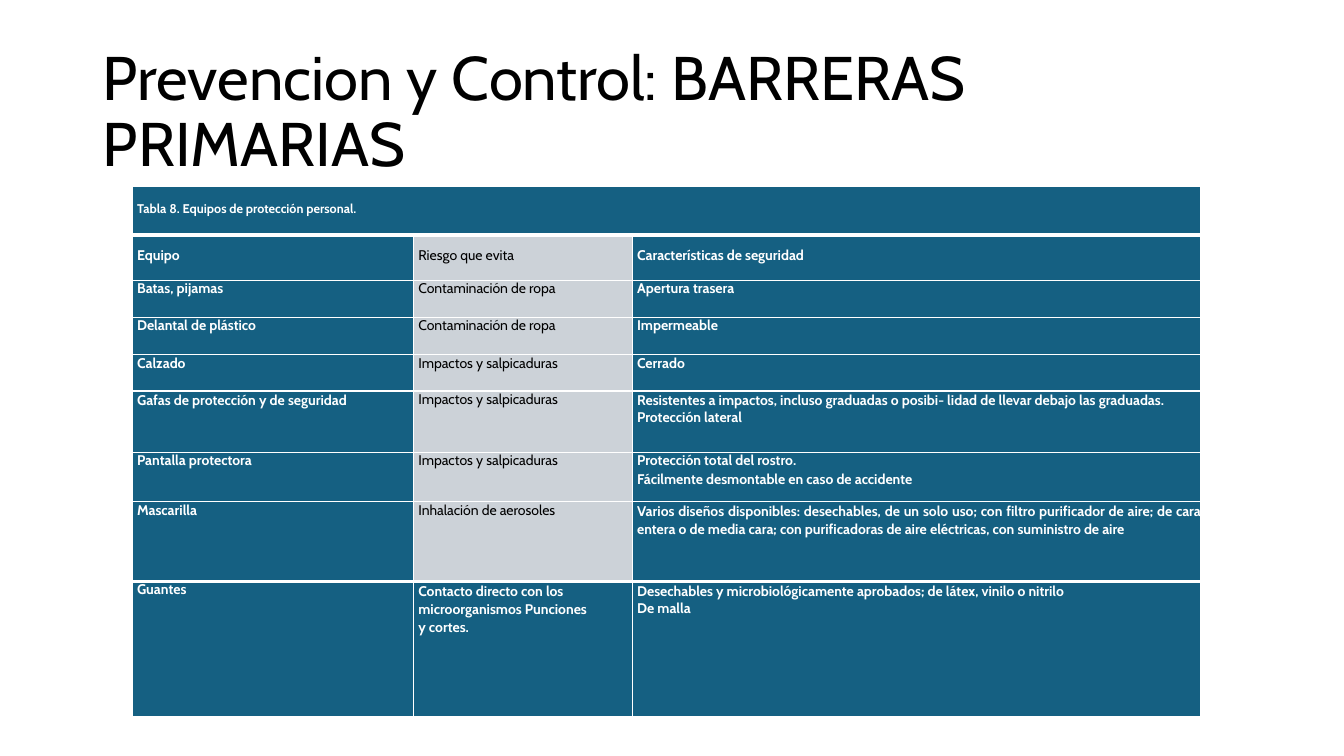
from lxml import etree
from pptx import Presentation, util as u
from pptx.dml.color import RGBColor
from pptx.enum import text
from pptx.oxml.ns import qn

COLORS = {"blue": "156082", "grey": "CCD2D8", "white": "FFFFFF", "black": "000000"}
FONT = "Cabin"
COLUMNS = [2.79, 2.17, 5.64]
HEIGHTS = [0.48, 0.45, 0.37, 0.37, 0.36, 0.61, 0.49, 0.79, 1.34]
ROWS = [
    ["Tabla 8. Equipos de protección personal."],
    ["Equipo", "Riesgo que evita", "Características de seguridad"],
    ["Batas, pijamas", "Contaminación de ropa", "Apertura trasera"],
    ["Delantal de plástico", "Contaminación de ropa", "Impermeable"],
    ["Calzado", "Impactos y salpicaduras", "Cerrado"],
    ["Gafas de protección y de seguridad", "Impactos y salpicaduras",
     "Resistentes a impactos, incluso graduadas o posibi- lidad de llevar debajo "
     "las graduadas.\nProtección lateral"],
    ["Pantalla protectora", "Impactos y salpicaduras",
     "Protección total del rostro.\nFácilmente desmontable en caso de accidente"],
    ["Mascarilla", "Inhalación de aerosoles",
     "Varios diseños disponibles: desechables, de un solo uso; con filtro purificador "
     "de aire; de cara entera o de media cara; con purificadoras de aire eléctricas, "
     "con suministro de aire"],
    ["Guantes", "Contacto directo con los microorganismos Punciones y cortes.",
     "Desechables y microbiológicamente aprobados; de látex, vinilo o nitrilo\nDe malla"],
]
LAST = len(ROWS) - 1
LOOSE = {(5, 0), (5, 2), (7, 2), (8, 1), (8, 2)}  # cells with wider line spacing
TOP_MARGINS = {0: 0.15, 1: 0.12}
THICK_BELOW = {0, LAST - 1}


def style(para, size, color, bold=False):
    para.font.name = FONT
    para.font.size = u.Pt(size)
    para.font.bold = bold
    para.font.color.rgb = RGBColor.from_string(COLORS[color])


def add_border(cell, side, points):
    line = etree.SubElement(cell._tc.get_or_add_tcPr(), qn(f"a:ln{side}"),
                            w=str(u.Pt(points)))
    fill = etree.SubElement(line, qn("a:solidFill"))
    etree.SubElement(fill, qn("a:srgbClr"), val=COLORS["white"])


deck = Presentation()
deck.slide_width, deck.slide_height = u.Inches(13.33), u.Inches(7.5)
page = deck.slides.add_slide(deck.slide_layouts[5])

# Title
title = page.shapes.title
title.left, title.top, title.width, title.height = map(u.Inches, (0.92, 0.4, 11.5, 1.45))
frame = title.text_frame
frame.text = "Prevencion y Control: BARRERAS PRIMARIAS"
frame.word_wrap = True
frame.auto_size = text.MSO_AUTO_SIZE.NONE
frame.vertical_anchor = text.MSO_ANCHOR.MIDDLE
heading = frame.paragraphs[0]
heading.alignment = text.PP_ALIGN.LEFT
heading.line_spacing = 0.9
style(heading, 44, "black")

# Table grid
table = page.shapes.add_table(
    len(ROWS), len(COLUMNS), u.Inches(1.31), u.Inches(1.85),
    u.Inches(sum(COLUMNS)), u.Inches(sum(HEIGHTS))).table
for column, width in zip(table.columns, COLUMNS):
    column.width = u.Inches(width)
for row, height in zip(table.rows, HEIGHTS):
    row.height = u.Inches(height)
table.cell(0, 0).merge(table.cell(0, len(COLUMNS) - 1))

# Cells: borders, fills and margins
for r, row in enumerate(table.rows):
    for c, cell in enumerate(row.cells):
        risk = c == 1 and 0 < r < LAST
        for side, thick in (("L", False), ("R", False),
                            ("T", r - 1 in THICK_BELOW), ("B", r in THICK_BELOW)):
            add_border(cell, side, 3 if thick else 1)
        cell.fill.solid()
        cell.fill.fore_color.rgb = RGBColor.from_string(COLORS["grey" if risk else "blue"])
        cell.margin_left = u.Inches(0.05)
        cell.margin_right = u.Inches(0.38 if (r, c) == (LAST, 1) else 0)
        cell.margin_top = u.Inches(TOP_MARGINS.get(r, 0))
        cell.margin_bottom = 0
        if c >= len(ROWS[r]):
            continue

        # Cell text
        cell.text_frame.text = ROWS[r][c]
        for i, para in enumerate(cell.text_frame.paragraphs):
            if (r, c) in LOOSE:
                para.line_spacing = u.Pt(12.1) if i else 1.07
            elif i:
                para.space_before = u.Pt(0.9)
            if (r, c) == (7, 2):
                para.alignment = text.PP_ALIGN.JUSTIFY
            style(para, 10 if r else 9, "black" if risk else "white", not risk)

deck.save("out.pptx")
